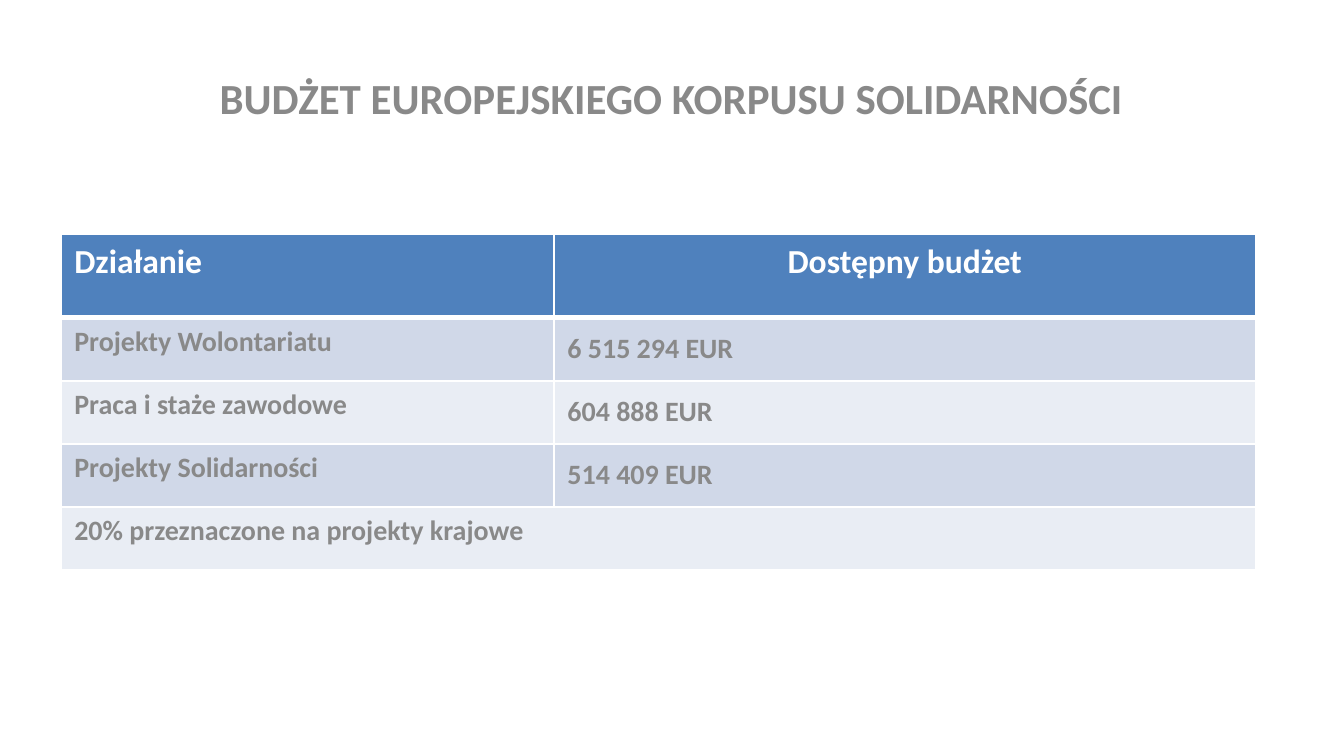
import pptx
import pptx.util
import pptx.dml.color
import pptx.enum.text
import pptx.oxml
import pptx.oxml.ns

Cm, Pt = pptx.util.Cm, pptx.util.Pt
ALIGN = pptx.enum.text.PP_ALIGN
ANCHOR = pptx.enum.text.MSO_ANCHOR

TITLE = "BUDŻET EUROPEJSKIEGO KORPUSU SOLIDARNOŚCI"
HEADER = ("Działanie", "Dostępny budżet")
BUDGETS = [
    ("Projekty Wolontariatu", "6 515 294 EUR"),
    ("Praca i staże zawodowe", "604 888 EUR"),
    ("Projekty Solidarności", "514 409 EUR"),
]
NOTE = "20% przeznaczone na projekty krajowe"

THEME = {
    "font": "Calibri",
    "text": "898989",
    "header_text": "FFFFFF",
    "header_fill": "4F81BD",
    "bands": ("D0D8E8", "E9EDF4"),
    "border": "FFFFFF",
    "title_size": 23,
    "header_size": 18,
    "body_size": 15,
}
COLUMN_WIDTHS = (Cm(9.32), Cm(13.26))
HEADER_HEIGHT, ROW_HEIGHT = Cm(1.58), Cm(1.19)


def rgb(value):
    return pptx.dml.color.RGBColor.from_string(value)


def format_text(para, size, color, align):
    para.alignment = align
    for span in para.runs:
        span.font.name = THEME["font"]
        span.font.size = Pt(size)
        span.font.bold = True
        span.font.color.rgb = rgb(color)


def add_borders(cell, bottom_width):
    properties = cell._tc.get_or_add_tcPr()
    for side, width in (("L", 1), ("R", 1), ("T", 1), ("B", bottom_width)):
        properties.append(pptx.oxml.parse_xml(
            f'<a:ln{side} {pptx.oxml.ns.nsdecls("a")} w="{Pt(width)}"><a:solidFill>'
            f'<a:srgbClr val="{THEME["border"]}"/></a:solidFill></a:ln{side}>'))


def add_title(page):
    title = page.shapes.title
    title.left, title.top = Cm(1.9), Cm(0.76)
    title.width, title.height = Cm(21.6), Cm(1.7)
    frame = title.text_frame
    frame.text = TITLE
    frame.word_wrap = True
    frame.auto_size = pptx.enum.text.MSO_AUTO_SIZE.NONE
    frame.vertical_anchor = ANCHOR.BOTTOM
    format_text(frame.paragraphs[0], THEME["title_size"], THEME["text"], ALIGN.CENTER)


def add_budget_table(page):
    rows = [HEADER, *BUDGETS, (NOTE, "")]
    heights = [HEADER_HEIGHT] + [ROW_HEIGHT] * (len(rows) - 1)
    table = page.shapes.add_table(
        len(rows), len(HEADER), Cm(1.15), Cm(4.43), sum(COLUMN_WIDTHS), sum(heights)).table
    for column, width in zip(table.columns, COLUMN_WIDTHS):
        column.width = width
    for r, (values, height) in enumerate(zip(rows, heights)):
        table.rows[r].height = height
        is_header = r == 0
        for c, value in enumerate(values):
            cell = table.cell(r, c)
            cell.text = value
            add_borders(cell, 3 if is_header else 1)
            cell.fill.solid()
            fill = THEME["header_fill"] if is_header else THEME["bands"][(r - 1) % 2]
            cell.fill.fore_color.rgb = rgb(fill)
            is_amount = c == 1 and not is_header
            cell.vertical_anchor = ANCHOR.MIDDLE if is_amount else ANCHOR.TOP
            format_text(
                cell.text_frame.paragraphs[0],
                THEME["header_size" if is_header else "body_size"],
                THEME["header_text" if is_header else "text"],
                ALIGN.CENTER if is_header and c == 1 else ALIGN.LEFT)
    last = len(rows) - 1
    table.cell(last, 0).merge(table.cell(last, 1))


def main():
    deck = pptx.Presentation()
    deck.slide_width, deck.slide_height = Cm(25.4), Cm(14.29)
    page = deck.slides.add_slide(deck.slide_layouts.get_by_name("Title Only"))
    add_title(page)
    add_budget_table(page)
    deck.save("out.pptx")


if __name__ == "__main__":
    main()
